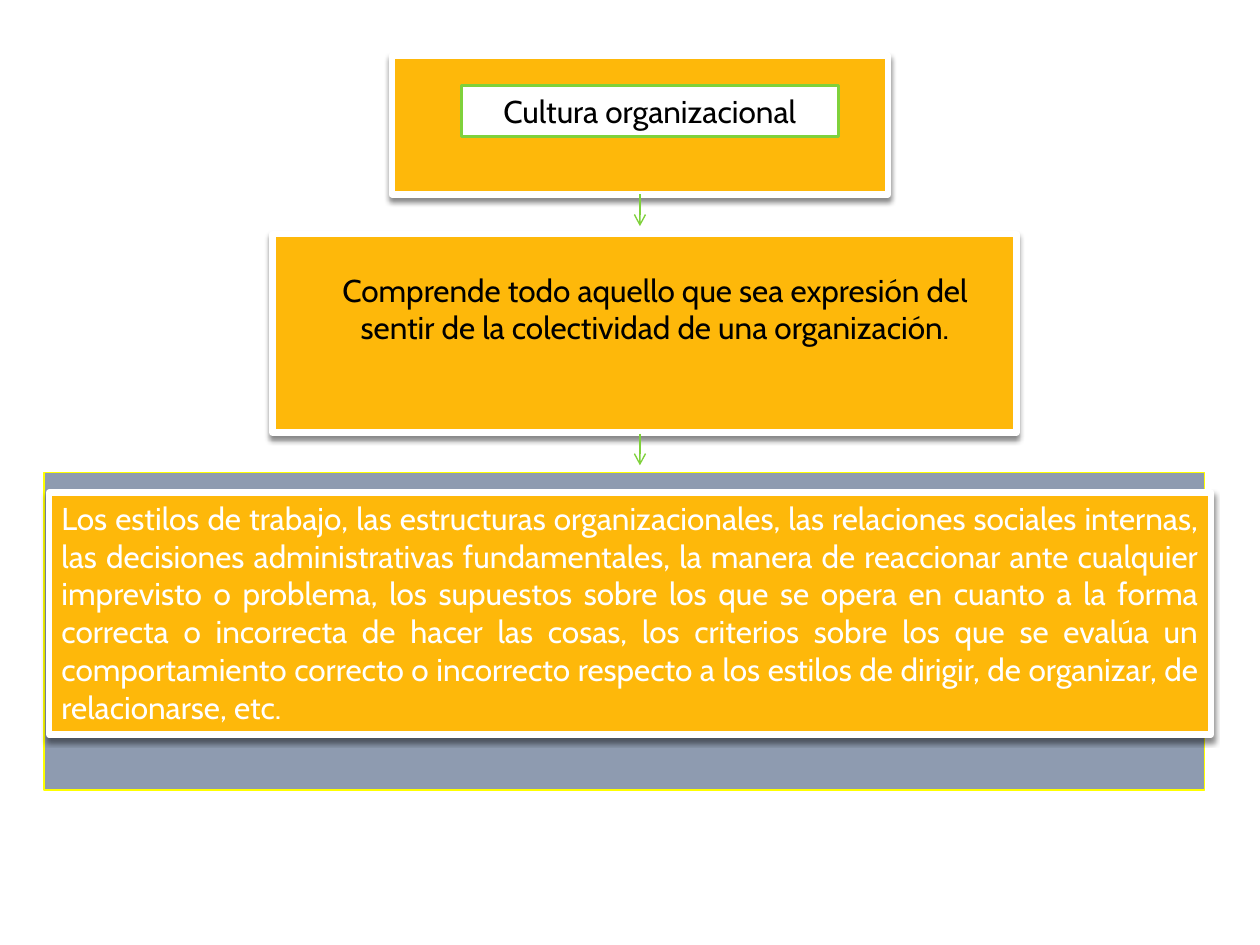
from lxml.etree import SubElement
from pptx import Presentation
from pptx.dml.color import RGBColor
from pptx.enum.shapes import MSO_CONNECTOR, MSO_SHAPE
from pptx.enum.text import MSO_ANCHOR, PP_ALIGN
from pptx.oxml.ns import qn
from pptx.util import Cm, Pt

AMBER = RGBColor(0xFE, 0xB8, 0x0A)
WHITE = RGBColor(0xFF, 0xFF, 0xFF)
BLACK = RGBColor(0x00, 0x00, 0x00)
GREEN = RGBColor(0x7F, 0xD1, 0x3B)
SLATE = RGBColor(0x8E, 0x9B, 0xB0)
YELLOW = RGBColor(0xFF, 0xFF, 0x00)

TITLE = "Cultura organizacional"
DEFINITION = ("Comprende todo aquello que sea expresión del sentir de la "
              "colectividad de una organización.")
ELEMENTS = (
    "Los estilos de trabajo, las estructuras organizacionales, las relaciones "
    "sociales internas, las decisiones administrativas fundamentales, la manera "
    "de reaccionar ante cualquier imprevisto o problema, los supuestos sobre los "
    "que se opera en cuanto a la forma correcta o incorrecta de hacer las cosas, "
    "los criterios sobre los que se evalúa un comportamiento correcto o "
    "incorrecto respecto a los estilos de dirigir, de organizar, de "
    "relacionarse, etc."
)
ARROW_X, ARROW_LENGTH = 12.9, 0.64


def add_box(s, at, fill, line, width):
    sp = s.shapes.add_shape(MSO_SHAPE.RECTANGLE, *map(Cm, at))
    sp.shadow.inherit = False
    sp.fill.solid()
    sp.fill.fore_color.rgb = fill
    sp.line.color.rgb = line
    sp.line.width = Pt(width)
    return sp


def add_card(s, at):
    """Add an amber box with a thick white frame and a soft shadow below."""
    sp = add_box(s, at, AMBER, WHITE, 3.75)
    effects = sp._element.spPr.find(qn("a:effectLst"))
    shadow = SubElement(effects, qn("a:outerShdw"), blurRad=str(Pt(3)),
                        dist=str(Pt(2.4)), dir="5400000", rotWithShape="0")
    color = SubElement(shadow, qn("a:srgbClr"), val=str(BLACK))
    SubElement(color, qn("a:alpha"), val="45000")
    return sp


def write(sp, text, color, align=PP_ALIGN.CENTER):
    tf = sp.text_frame
    tf.word_wrap = True
    tf.vertical_anchor = MSO_ANCHOR.TOP
    p = tf.paragraphs[0]
    p.alignment = align
    r = p.add_run()
    r.text = text
    for name, value in {"name": "Cabin", "size": Pt(18)}.items():
        setattr(r.font, name, value)
    r.font.color.rgb = color


def add_down_arrow(s, top):
    cn = s.shapes.add_connector(MSO_CONNECTOR.STRAIGHT, Cm(ARROW_X), Cm(top),
                                Cm(ARROW_X), Cm(top + ARROW_LENGTH))
    cn.line.color.rgb = GREEN
    cn.line.width = Pt(0.79)
    SubElement(cn.line._get_or_add_ln(), qn("a:tailEnd"), type="arrow")
    SubElement(cn._element.spPr, qn("a:effectLst"))
    return cn


def main():
    prs = Presentation()
    prs.slide_width, prs.slide_height = Cm(25.4), Cm(19.05)
    s = prs.slides.add_slide(prs.slide_layouts[6])

    title_card = add_card(s, (7.9, 1.12, 10, 2.8))
    title = add_box(s, (9.3, 1.73, 7.6, 1.02), WHITE, GREEN, 1.5)
    write(title, TITLE, BLACK)

    add_card(s, (5.49, 4.72, 15, 4))
    definition = s.shapes.add_textbox(Cm(6.5), Cm(5.33), Cm(13.41), Cm(2.54))
    write(definition, DEFINITION, BLACK)

    add_box(s, (0.89, 9.53, 23.4, 6.4), SLATE, YELLOW, 0.75)
    elements = add_card(s, (0.99, 9.93, 23.42, 4.88))
    write(elements, ELEMENTS, WHITE, PP_ALIGN.JUSTIFY)

    add_down_arrow(s, 3.92).begin_connect(title_card, 2)
    add_down_arrow(s, 8.74)

    prs.save("out.pptx")


if __name__ == "__main__":
    main()
